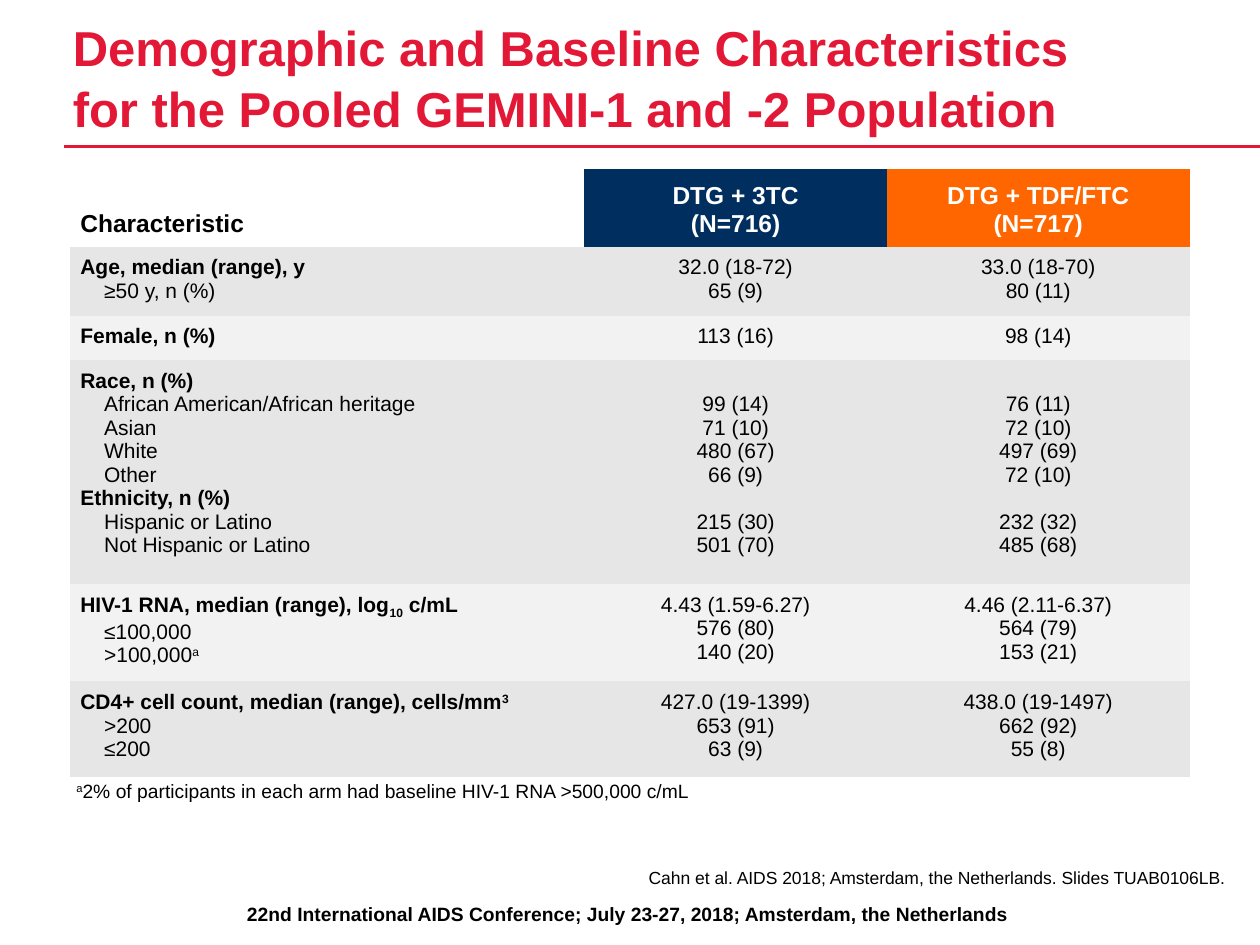
from dataclasses import dataclass

from pptx import Presentation
from pptx.dml.color import RGBColor as Rgb
from pptx.enum.shapes import MSO_CONNECTOR as Link
from pptx.enum.text import MSO_ANCHOR as Anchor, PP_ALIGN as Align
from pptx.oxml.ns import qn
from pptx.util import Cm, Pt
from lxml.etree import SubElement


@dataclass(frozen=True)
class Theme:
    font: str = "Arial"
    red: str = "E31836"
    navy: str = "002F5F"
    orange: str = "FF6600"
    dark: str = "E6E6E6"
    light: str = "F2F2F2"
    black: str = "000000"
    white: str = "FFFFFF"
    title: int = 28
    head: int = 14
    body: int = 12
    note: int = 11
    cite: int = 10


THEME = Theme()
NO_GRID = "{2D5ABB26-0587-4C30-8999-92F81FD0307C}"
SHIFTS = {"^": "30000", "_": "-25000"}
LINE = 13.5
INDENT = 0.48
PAD_X, PAD_Y = 0.2, 0.18

COLS = (10.36, 6.1, 6.1)
HEAD = (
    (["Characteristic"], None, THEME.black, Align.LEFT),
    (["DTG + 3TC", "(N=716)"], THEME.navy, THEME.white, Align.CENTER),
    (["DTG + TDF/FTC", "(N=717)"], THEME.orange, THEME.white, Align.CENTER),
)
HEAD_TALL = 1.57

# Each row: height, then groups of a heading line and its indented lines.
ROWS = (
    (1.4, [
        [("Age, median (range), y", "32.0 (18-72)", "33.0 (18-70)"),
         ("≥50 y, n (%)", "65 (9)", "80 (11)")],
    ]),
    (0.89, [
        [("Female, n (%)", "113 (16)", "98 (14)")],
    ]),
    (4.52, [
        [("Race, n (%)", "", ""),
         ("African American/African heritage", "99 (14)", "76 (11)"),
         ("Asian", "71 (10)", "72 (10)"),
         ("White", "480 (67)", "497 (69)"),
         ("Other", "66 (9)", "72 (10)")],
        [("Ethnicity, n (%)", "", ""),
         ("Hispanic or Latino", "215 (30)", "232 (32)"),
         ("Not Hispanic or Latino", "501 (70)", "485 (68)")],
    ]),
    (1.96, [
        [("HIV-1 RNA, median (range), log|_10| c/mL",
          "4.43 (1.59-6.27)", "4.46 (2.11-6.37)"),
         ("≤100,000", "576 (80)", "564 (79)"),
         (">100,000|^a", "140 (20)", "153 (21)")],
    ]),
    (1.93, [
        [("CD4+ cell count, median (range), cells/mm|^3",
          "427.0 (19-1399)", "438.0 (19-1497)"),
         (">200", "653 (91)", "662 (92)"),
         ("≤200", "63 (9)", "55 (8)")],
    ]),
)


def write(frame, text, size=THEME.body, color=THEME.black, bold=False,
          align=Align.LEFT, indent=0, before=0, after=0, lead=None):
    para = frame.paragraphs[0]
    if para.runs:
        para = frame.add_paragraph()
    para.alignment = align
    para.space_before, para.space_after = Pt(before), Pt(after)
    if lead:
        para.line_spacing = Pt(lead)
    if indent:
        para._p.get_or_add_pPr().set("marL", str(Cm(indent)))
    for part in text.split("|"):
        shift = SHIFTS.get(part[0])
        run = para.add_run()
        run.text = part[1:] if shift else part
        font = run.font
        font.name, font.size, font.bold = THEME.font, Pt(size), bold
        font.color.rgb = Rgb.from_string(color)
        if shift:
            run._r.get_or_add_rPr().set("baseline", shift)


def add_text(slide, box, text, pad=(0, 0), anchor=Anchor.TOP, **fmt):
    frame = slide.shapes.add_textbox(*map(Cm, box)).text_frame
    frame.word_wrap = True
    frame.vertical_anchor = anchor
    frame.margin_left = frame.margin_right = Cm(pad[0])
    frame.margin_top = frame.margin_bottom = Cm(pad[1])
    write(frame, text, **fmt)


def add_rule(slide, left, right, y):
    rule = slide.shapes.add_connector(
        Link.STRAIGHT, Cm(left), Cm(y), Cm(right), Cm(y))
    rule.line.color.rgb = Rgb.from_string(THEME.red)
    rule.line.width = Pt(2)
    SubElement(rule._element.spPr, qn("a:effectLst"))


def set_cell(cell, fill, anchor=Anchor.TOP):
    cell.margin_left = cell.margin_right = Cm(PAD_X)
    cell.margin_top = cell.margin_bottom = Cm(PAD_Y)
    cell.vertical_anchor = anchor
    if fill:
        cell.fill.solid()
        cell.fill.fore_color.rgb = Rgb.from_string(fill)
    else:
        cell.fill.background()
    return cell.text_frame


def fill_label(frame, groups):
    for head, *subs in groups:
        write(frame, head[0], bold=True)
        for sub in subs:
            write(frame, sub[0], indent=INDENT)


def fill_value(cell, groups, col):
    gap = 0
    for line in (line for group in groups for line in group):
        if not line[col]:
            gap = LINE
            continue
        first = not cell.text_frame.text
        if first:
            cell.margin_top = Cm(PAD_Y) + Pt(gap)
        write(cell.text_frame, line[col], align=Align.CENTER,
              before=0 if first else gap)
        gap = 0


def add_grid(slide, left, top):
    tall = [HEAD_TALL] + [row[0] for row in ROWS]
    table = slide.shapes.add_table(
        len(tall), len(COLS), Cm(left), Cm(top),
        Cm(sum(COLS)), Cm(sum(tall))).table
    table.first_row = table.horz_banding = False
    table._tbl.tblPr.find(qn("a:tableStyleId")).text = NO_GRID
    for col, wide in zip(table.columns, COLS):
        col.width = Cm(wide)
    for row, high in zip(table.rows, tall):
        row.height = Cm(high)
    for col, (lines, fill, color, align) in enumerate(HEAD):
        frame = set_cell(table.cell(0, col), fill, Anchor.BOTTOM)
        for line in lines:
            write(frame, line, size=THEME.head, color=color, bold=True,
                  align=align)
    for num, (_, groups) in enumerate(ROWS, 1):
        fill = THEME.dark if num % 2 else THEME.light
        fill_label(set_cell(table.cell(num, 0), fill), groups)
        for col in (1, 2):
            cell = table.cell(num, col)
            set_cell(cell, fill)
            fill_value(cell, groups, col)


def main():
    deck = Presentation()
    deck.slide_width, deck.slide_height = Cm(25.4), Cm(19.05)
    slide = deck.slides.add_slide(deck.slide_layouts[6])
    add_rule(slide, 1.3, 25.4, 2.95)
    add_text(slide, (0.15, 18.06, 25.02, 0.74),
             "22nd International AIDS Conference; July 23-27, 2018; "
             "Amsterdam, the Netherlands",
             pad=(0.25, 0.13), size=THEME.note, bold=True,
             align=Align.CENTER)
    add_text(slide, (1.47, 0.43, 20.96, 2.34),
             "Demographic and Baseline Characteristics "
             "for the Pooled GEMINI-1 and -2 Population",
             anchor=Anchor.BOTTOM, size=THEME.title, color=THEME.red,
             bold=True, lead=35)
    add_text(slide, (1.47, 17.48, 23.22, 0.51),
             "Cahn et al. AIDS 2018; Amsterdam, the Netherlands. "
             "Slides TUAB0106LB.",
             size=THEME.cite, align=Align.RIGHT, after=3)
    add_grid(slide, 1.42, 3.4)
    add_text(slide, (1.24, 15.7, 23.14, 0.86),
             "^a|2% of participants in each arm had baseline "
             "HIV-1 RNA >500,000 c/mL",
             size=THEME.note, indent=0.3)
    deck.save("out.pptx")


if __name__ == "__main__":
    main()
